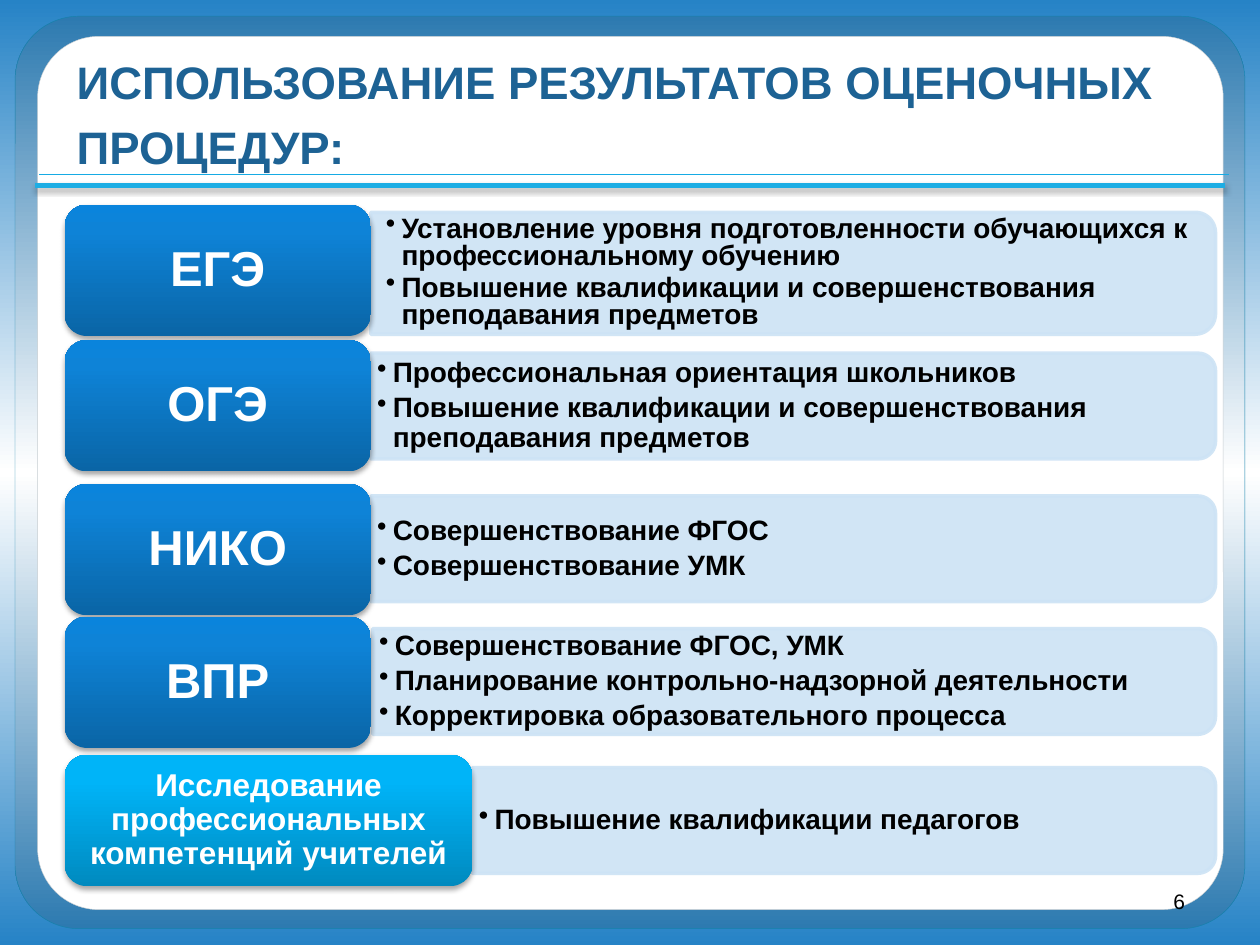
import math

import lxml.etree
import pptx
import pptx.dml.color
import pptx.enum.shapes
import pptx.enum.text
import pptx.oxml.ns
import pptx.util

Pt = pptx.util.Pt
RGBColor = pptx.dml.color.RGBColor
SHAPE = pptx.enum.shapes.MSO_SHAPE
ANCHOR = pptx.enum.text.MSO_ANCHOR
ALIGN = pptx.enum.text.PP_ALIGN
qn = pptx.oxml.ns.qn

WHITE = RGBColor(0xFF, 0xFF, 0xFF)
BLACK = RGBColor(0x00, 0x00, 0x00)
SKY = RGBColor(0x26, 0x83, 0xC6)
STEEL = RGBColor(0x2D, 0x7A, 0xB0)
FRAME_EDGE = RGBColor(0x14, 0x82, 0xAC)
SHEET_EDGE = RGBColor(0xC6, 0xCD, 0xD1)
TITLE_BLUE = RGBColor(0x1D, 0x62, 0x94)
RULE_THICK = RGBColor(0x1C, 0xAD, 0xE4)
RULE_THIN = RGBColor(0x16, 0xAB, 0xE4)
PALE = RGBColor(0xCD, 0xE3, 0xF5)
EXAM_STOPS = [(0, RGBColor(0x0A, 0x65, 0xA6)), (80, RGBColor(0x0E, 0x83, 0xD7)),
              (100, RGBColor(0x0A, 0x84, 0xDC))]
STUDY_STOPS = [(0, RGBColor(0x00, 0x8A, 0xBF)), (80, RGBColor(0x00, 0xB4, 0xF8)),
               (100, RGBColor(0x00, 0xB5, 0xF9))]


def set_gradient(fill, owner, stops, angle):
    fill.gradient()
    fill.gradient_angle = angle
    stop_list = next(owner.iter(qn("a:gsLst")))
    for stop in list(stop_list):
        stop_list.remove(stop)
    for position, color in stops:
        stop = lxml.etree.SubElement(stop_list, qn("a:gs"), pos=str(position * 1000))
        lxml.etree.SubElement(stop, qn("a:srgbClr"), val=str(color))


def add_shadow(effects):
    shadow = lxml.etree.SubElement(
        effects, qn("a:outerShdw"), blurRad=str(Pt(3.1)), dist=str(Pt(1.8)),
        dir="5400000", algn="t", rotWithShape="0")
    color = lxml.etree.SubElement(shadow, qn("a:srgbClr"), val=str(BLACK))
    lxml.etree.SubElement(color, qn("a:alpha"), val="35000")


deck = pptx.Presentation()
deck.slide_width, deck.slide_height = Pt(720), Pt(540)
slide = deck.slides.add_slide(deck.slide_layouts[6])
shapes = slide.shapes

background = slide.background.fill
set_gradient(background, slide.element, [(0, SKY), (50, WHITE), (100, SKY)], 270)

for left, top, width, height, edge in [
    (8.6, 9.3, 702.8, 521.4, FRAME_EDGE),
    (21.5, 20.8, 677.5, 499, SHEET_EDGE),
]:
    layer = shapes.add_shape(SHAPE.ROUNDED_RECTANGLE, Pt(left), Pt(top), Pt(width), Pt(height))
    layer.adjustments[0] = 0.07
    layer.shadow.inherit = False
    layer.line.color.rgb = edge
    layer.line.width = Pt(0.25)
    if edge == FRAME_EDGE:
        set_gradient(layer.fill, layer.element, [(0, STEEL), (50, WHITE), (100, STEEL)], 270)
    else:
        layer.fill.solid()
        layer.fill.fore_color.rgb = WHITE

title = shapes.add_textbox(Pt(36.7), Pt(20.9), Pt(657.4), Pt(82.8)).text_frame
title.word_wrap = True
title.text = "ИСПОЛЬЗОВАНИЕ РЕЗУЛЬТАТОВ ОЦЕНОЧНЫХ ПРОЦЕДУР:"
title.paragraphs[0].line_spacing = 1.2
title_font = title.paragraphs[0].runs[0].font
title_font.name, title_font.size, title_font.bold = "Arial", Pt(26), True
title_font.color.rgb = TITLE_BLUE

for start, end, height, color, weight in [
    (20.2, 699.8, 105.8, RULE_THICK, 3),
    (22.5, 702.5, 99.9, RULE_THIN, 0.75),
]:
    rule = shapes.add_connector(
        pptx.enum.shapes.MSO_CONNECTOR.STRAIGHT, Pt(start), Pt(height), Pt(end), Pt(height))
    rule.line.color.rgb = color
    rule.line.width = Pt(weight)
    effects = lxml.etree.SubElement(rule.element.spPr, qn("a:effectLst"))
    if color == RULE_THICK:
        add_shadow(effects)

SUBJECTS = "Повышение квалификации и совершенствования преподавания предметов"
procedures = [
    ("ЕГЭ", 116.9, 211.9, 121.3, 69.7, [
        "Установление уровня подготовленности обучающихся к профессиональному обучению", SUBJECTS]),
    ("ОГЭ", 194.3, 211.9, 201.8, 60.4, ["Профессиональная ориентация школьников", SUBJECTS]),
    ("НИКО", 276.5, 211.9, 283.4, 60.4, ["Совершенствование ФГОС", "Совершенствование УМК"]),
    ("ВПР", 352.3, 213.1, 359.2, 60.4, [
        "Совершенствование ФГОС, УМК", "Планирование контрольно-надзорной деятельности",
        "Корректировка образовательного процесса"]),
    ("Исследование профессиональных компетенций учителей", 431.3, 270, 438.6, 60.4,
     ["Повышение квалификации педагогов"]),
]
LABEL_LEFT, LABEL_HEIGHT, PANEL_RIGHT = 36.9, 75.1, 694.6

for name, label_top, panel_left, panel_top, panel_height, uses in procedures:
    is_first = name == "ЕГЭ"
    is_study = panel_left == 270
    radius = panel_height / 6
    panel_bottom = panel_top + panel_height
    corner = [
        (PANEL_RIGHT - radius + radius * math.cos(math.radians(angle)),
         center + radius * math.sin(math.radians(angle)))
        for center, first in [(panel_top + radius, -90), (panel_bottom - radius, 0)]
        for angle in range(first, first + 91, 10)
    ]
    outline = shapes.build_freeform(Pt(panel_left), Pt(panel_top))
    outline.add_line_segments(
        [(Pt(x), Pt(y)) for x, y in corner + [(panel_left, panel_bottom)]], close=True)
    panel = outline.convert_to_shape()
    panel.shadow.inherit = False
    panel.fill.solid()
    panel.fill.fore_color.rgb = PALE
    panel.line.color.rgb = PALE
    panel.line.width = Pt(2)
    for color in panel.element.spPr.iter(qn("a:srgbClr")):
        lxml.etree.SubElement(color, qn("a:alpha"), val="90000")

    body = panel.text_frame
    body.word_wrap = True
    body.vertical_anchor = ANCHOR.MIDDLE
    body.margin_left, body.margin_right = (Pt(8.6), Pt(11.5)) if is_first else (Pt(3.6), Pt(6.5))
    body.margin_top = body.margin_bottom = Pt(7.2 if is_first else 5)
    body.text = "\n".join(uses)
    for use in body.paragraphs:
        use.alignment = ALIGN.LEFT
        use.line_spacing = 0.8 if is_first else 0.9
        use.space_after = Pt(2.8)
        indent = use._p.get_or_add_pPr()
        indent.set("marL", str(Pt(9)))
        indent.set("indent", str(-Pt(9)))
        lxml.etree.SubElement(indent, qn("a:buChar"), char="•")
        font = use.runs[0].font
        font.name, font.size, font.bold = "Arial", Pt(16), True
        font.color.rgb = BLACK

    label = shapes.add_shape(
        SHAPE.ROUNDED_RECTANGLE, Pt(LABEL_LEFT), Pt(label_top),
        Pt(233.1 if is_study else 175), Pt(LABEL_HEIGHT))
    label.adjustments[0] = 0.17
    label.shadow.inherit = False
    add_shadow(label.element.spPr.find(qn("a:effectLst")))
    label.line.fill.background()
    set_gradient(label.fill, label.element, STUDY_STOPS if is_study else EXAM_STOPS, 90)
    caption = label.text_frame
    caption.word_wrap = True
    caption.vertical_anchor = ANCHOR.MIDDLE
    caption.margin_left = caption.margin_right = Pt(9.4 if is_study else 12.2)
    caption.margin_top = caption.margin_bottom = Pt(6.5 if is_study else 7.9)
    caption.text = name
    caption.paragraphs[0].alignment = ALIGN.CENTER
    caption.paragraphs[0].line_spacing = 0.9
    font = caption.paragraphs[0].runs[0].font
    font.name, font.size, font.bold = "Arial", Pt(18 if is_study else 28), True
    font.color.rgb = WHITE

page_number = shapes.add_textbox(Pt(516.2), Pt(500.4), Pt(168), Pt(28.8)).text_frame
page_number.word_wrap = True
page_number.vertical_anchor = ANCHOR.MIDDLE
page_number.text = "6"
page_number.paragraphs[0].alignment = ALIGN.RIGHT
number_font = page_number.paragraphs[0].runs[0].font
number_font.name, number_font.size = "Arial", Pt(12)
number_font.color.rgb = BLACK

deck.save("out.pptx")
